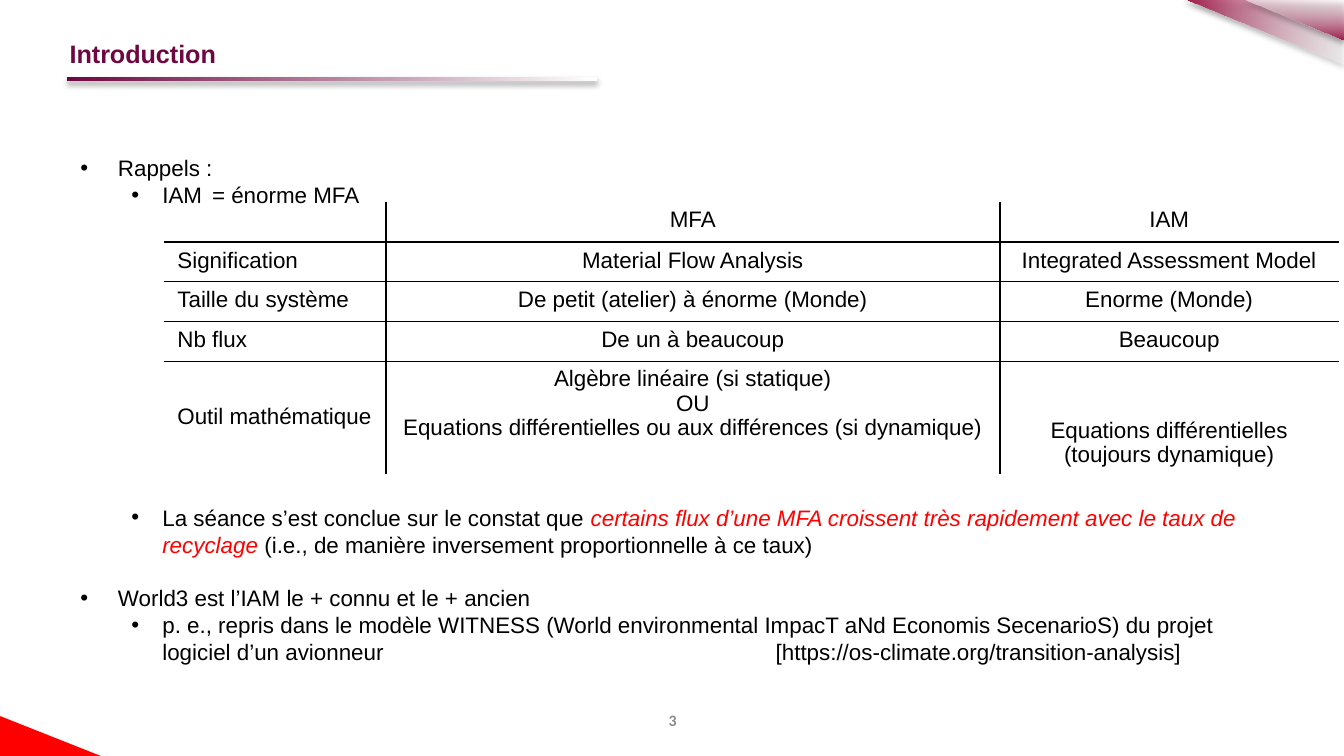
from lxml.etree import SubElement
from pptx import Presentation
from pptx.dml.color import RGBColor as Rgb
from pptx.enum.shapes import MSO_SHAPE as Shape
from pptx.enum.text import MSO_ANCHOR as Anchor, PP_ALIGN as Align
from pptx.oxml.ns import qn
from pptx.util import Pt

COLORS = {"black": "000000", "white": "FFFFFF", "plum": "6E0740",
          "crimson": "9D1747", "red": "FF0000", "gray": "8C8C8C"}
WIDTH, HEIGHT = 720, 405
LINE = 14.4  # line pitch of the body

# Each bullet: level, space before, spans of (text, format)
BULLETS = [
    (0, 0, [("Rappels :", {})]),
    (1, 0, [("IAM\t= énorme MFA", {})]),
    (1, 11 * LINE, [
        ("La séance s’est conclue sur le constat que ", {}),
        ("certains flux d’une MFA croissent très rapidement avec le taux de recyclage ",
         {"color": "red", "italic": True}),
        ("(i.e., de manière inversement proportionnelle à ce taux)", {})]),
    (0, LINE, [("World3 est l’IAM le + connu et le + ancien", {})]),
    (1, 0, [("p. e., repris dans le modèle WITNESS (World environmental ImpacT aNd "
             "Economis SecenarioS) du projet logiciel d’un avionneur"
             "\t[https://os-climate.org/transition-analysis]", {})]),
]
INDENTS = [(20.16, -20.16), (43.92, -16.56)]  # left margin, first line
TABS = [(49.68, "l"), (70.56, "l"), (119.52, "l"), (628.56, "r")]

ROWS = [
    ["", "MFA", "IAM"],
    ["Signification", "Material Flow Analysis", "Integrated Assessment Model"],
    ["Taille du système", "De petit (atelier) à énorme (Monde)", "Enorme (Monde)"],
    ["Nb flux", "De un à beaucoup", "Beaucoup"],
    ["Outil mathématique",
     "Algèbre linéaire (si statique)\nOU\n"
     "Equations différentielles ou aux différences (si dynamique)",
     "Equations différentielles (toujours dynamique)"],
]
COLUMN_WIDTHS = [118.8, 329.04, 181.44]
ROW_HEIGHTS = [20.6] * 4 + [60.8]
LAST_ROW_ANCHORS = [Anchor.MIDDLE, Anchor.TOP, Anchor.BOTTOM]


def rgb(name):
    return Rgb.from_string(COLORS[name])


def add_span(para, text, *, size=12, color="black", font="Arial", bold=False, italic=False):
    span = para.add_run()
    span.text = text
    span.font.size, span.font.name = Pt(size), font
    span.font.bold, span.font.italic = bold, italic
    span.font.color.rgb = rgb(color)


def add_box(page, left, top, width, height, anchor=Anchor.TOP):
    box = page.shapes.add_textbox(Pt(left), Pt(top), Pt(width), Pt(height))
    box.text_frame.word_wrap = True
    box.text_frame.vertical_anchor = anchor
    return box.text_frame


def add_shadow(shape):
    shape.shadow.inherit = False
    effects = shape.element.spPr.find(qn("a:effectLst"))
    shadow = SubElement(effects, qn("a:outerShdw"), blurRad=str(Pt(3.1)),
                        dist=str(Pt(1.8)), dir="5400000", rotWithShape="0")
    color = SubElement(shadow, qn("a:srgbClr"), val=COLORS["black"])
    SubElement(color, qn("a:alpha"), val="35000")


def fill_fade(shape, color, angle=0, opacity=100):
    """Fade from a colour to white; the angle runs counterclockwise."""
    shape.fill.gradient()
    shape.fill.gradient_angle = angle
    first, last = shape.fill.gradient_stops
    first.color.rgb, last.color.rgb = rgb(color), rgb("white")
    if opacity < 100:
        white = shape.element.spPr.findall(".//" + qn("a:srgbClr"))[-1]
        SubElement(white, qn("a:alpha"), val=str(opacity * 1000))


def add_triangle(page, start, *others):
    builder = page.shapes.build_freeform(Pt(start[0]), Pt(start[1]))
    builder.add_line_segments([(Pt(x), Pt(y)) for x, y in others], close=True)
    triangle = builder.convert_to_shape()
    triangle.line.fill.background()
    return triangle


def add_decor(page):
    # Rule under the title
    rule = page.shapes.add_shape(Shape.RECTANGLE, Pt(36), Pt(41.2), Pt(283.7), Pt(2.2))
    rule.line.fill.background()
    fill_fade(rule, "plum")
    add_shadow(rule)

    # Corner triangles
    large = add_triangle(page, (634.3, 0), (WIDTH, 0), (WIDTH, 34.6))
    fill_fade(large, "crimson", angle=352, opacity=47)
    add_shadow(large)
    small = add_triangle(page, (666, 0), (WIDTH, 0), (WIDTH, 21.6))
    fill_fade(small, "crimson", angle=90, opacity=57)
    add_shadow(small)
    corner = add_triangle(page, (0, 383.6), (54, HEIGHT), (0, HEIGHT))
    corner.fill.solid()
    corner.fill.fore_color.rgb = rgb("red")
    add_shadow(corner)


def add_bullets(page):
    frame = add_box(page, 36, 79.2, 648, 283)
    for number, (level, before, spans) in enumerate(BULLETS):
        para = frame.add_paragraph() if number else frame.paragraphs[0]
        para.level = level
        para.line_spacing, para.space_before = Pt(LINE), Pt(before)
        props = para._p.get_or_add_pPr()
        margin, indent = INDENTS[level]
        props.set("marL", str(Pt(margin)))
        props.set("indent", str(Pt(indent)))
        SubElement(props, qn("a:buFont"), typeface="Arial")
        SubElement(props, qn("a:buChar"), char="•")
        stops = SubElement(props, qn("a:tabLst"))
        for position, align in TABS:
            SubElement(stops, qn("a:tab"), pos=str(Pt(position)), algn=align)
        for text, style in spans:
            add_span(para, text, **style)


def add_border(cell, side, width):
    line = SubElement(cell._tc.get_or_add_tcPr(), qn("a:ln" + side), w=str(Pt(width)))
    if width:
        fill = SubElement(line, qn("a:solidFill"))
        SubElement(fill, qn("a:srgbClr"), val=COLORS["black"])
    else:
        SubElement(line, qn("a:noFill"))


def add_comparison(page):
    last_row, last_column = len(ROWS) - 1, len(COLUMN_WIDTHS) - 1
    table = page.shapes.add_table(
        len(ROWS), len(COLUMN_WIDTHS), Pt(87.84), Pt(108),
        Pt(sum(COLUMN_WIDTHS)), Pt(sum(ROW_HEIGHTS))).table
    table.first_row = table.horz_banding = False
    for column, width in zip(table.columns, COLUMN_WIDTHS):
        column.width = Pt(width)
    # Width of the horizontal line above each row, then below the last
    levels = [0, 1] + [0.25] * (last_row - 1) + [0]
    for r, texts in enumerate(ROWS):
        table.rows[r].height = Pt(ROW_HEIGHTS[r])
        for c, text in enumerate(texts):
            cell = table.cell(r, c)
            add_border(cell, "L", 1 if c else 0)
            add_border(cell, "R", 1 if c < last_column else 0)
            add_border(cell, "T", levels[r])
            add_border(cell, "B", levels[r + 1])
            cell.fill.background()
            cell.vertical_anchor = LAST_ROW_ANCHORS[c] if r == last_row else Anchor.TOP
            for number, line in enumerate(text.split("\n")):
                frame = cell.text_frame
                para = frame.add_paragraph() if number else frame.paragraphs[0]
                para.alignment = Align.CENTER if c else Align.LEFT
                para.line_spacing = 0.97
                para.font.size = Pt(12)
                if line:
                    add_span(para, line)


def main():
    deck = Presentation()
    deck.slide_width, deck.slide_height = Pt(WIDTH), Pt(HEIGHT)
    page = deck.slides.add_slide(deck.slide_layouts[6])
    add_decor(page)
    add_bullets(page)

    # Page number
    number = add_box(page, 246.24, 375.12, 228.24, 21.6, Anchor.MIDDLE).paragraphs[0]
    number.alignment = Align.CENTER
    add_span(number, "3", size=8.5, color="gray", font="Calibri", bold=True)

    # Title
    title = add_box(page, 30.24, 20.16, 648, 16.56, Anchor.MIDDLE)
    title.margin_top = title.margin_right = title.margin_bottom = 0
    add_span(title.paragraphs[0], "Introduction", size=13.5, color="plum", bold=True)

    add_comparison(page)
    deck.save("out.pptx")


if __name__ == "__main__":
    main()
